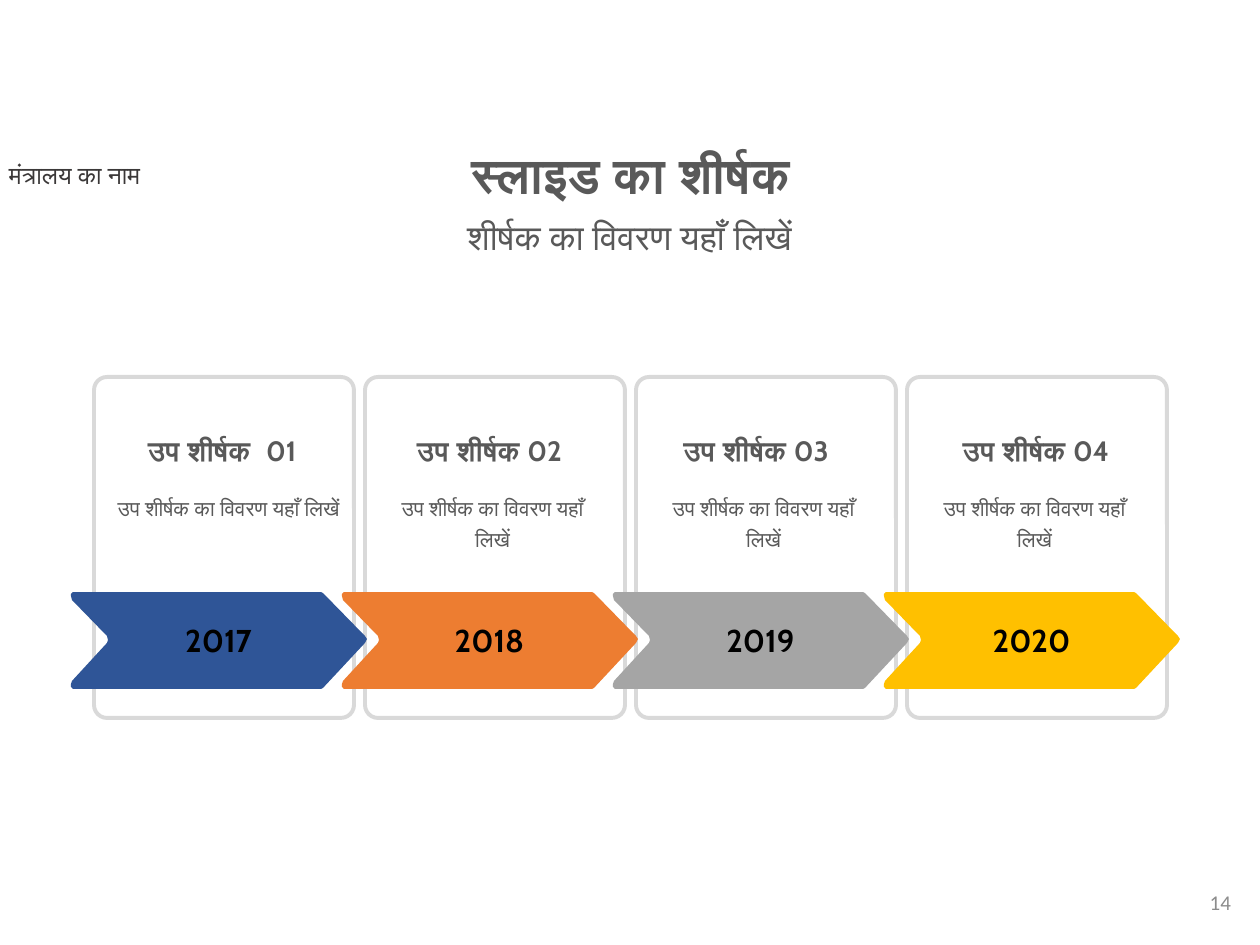
from pptx import Presentation
from pptx.dml.color import RGBColor
from pptx.enum.shapes import MSO_SHAPE as SHAPE
from pptx.enum.text import MSO_ANCHOR as ANCHOR, PP_ALIGN as ALIGN
from pptx.util import Pt

PX = 914400 // 126
PITCH = 271
GREY = "595959"
DETAIL = "उप शीर्षक का विवरण यहाँ लिखें"

# year, colour, heading runs, heading (left, width), detail (left, width)
CARDS = [
    ("2017", "2F5597", ("उप शीर्षक ", " 01"), (103, 238), (111, 235)),
    ("2018", "ED7D31", ("उप शीर्षक", " 02"), (375, 229), (381, 223)),
    ("2019", "A5A5A5", ("उप शीर्षक ", "03"), (639, 234), (652, 223)),
    ("2020", "FFC000", ("उप शीर्षक", " 04"), (917, 238), (923, 223)),
]
FRAME = (94, 377, 260, 341)
ARROW_AT = (69, 592)
ARROW = [
    (38, 44), (3, 8), (2, 4), (2, 2), (4, 0), (252, 0), (254, 1),
    (296, 44), (298, 47), (296, 51), (254, 96), (252, 97),
    (4, 97), (2, 95), (2, 92), (3, 89), (38, 51), (39, 48),
]
HEAD = dict(size=Pt(16), bold=True)
# text, box, alignment, anchor, font name, colour, font values, line spacing
LABELS = [
    ("मंत्रालय का नाम", (-4, 154, 275, 43), ALIGN.LEFT, ANCHOR.TOP,
     "Calibri", "3B3838", dict(size=Pt(14)), 1.0),
    ("14", (960, 877, 284, 50), ALIGN.RIGHT, ANCHOR.MIDDLE,
     "Calibri", "8C8C8C", dict(size=Pt(12)), 1.0),
    ("शीर्षक का विवरण यहाँ लिखें", (184, 214, 891, 79), ALIGN.CENTER, ANCHOR.TOP,
     "Calibri", GREY, dict(size=Pt(20)), 0.9),
    ("स्लाइड का शीर्षक", (234, 145, 793, 59), ALIGN.CENTER, ANCHOR.TOP,
     "Calibri", GREY, dict(size=Pt(28), bold=True), 0.9),
]


def rgb(value):
    return RGBColor.from_string(value)


def emu(box):
    return [v * PX for v in box]


def add_text(s, box, runs, color, font, align=ALIGN.CENTER, anchor=ANCHOR.TOP,
             spacing=1.0, insets=(13, 6)):
    """Add a one-paragraph text box; runs are (text, font name) pairs."""
    tf = s.shapes.add_textbox(*emu(box)).text_frame
    side, edge = emu(insets)
    frame = dict(word_wrap=True, vertical_anchor=anchor, margin_left=side,
                 margin_right=side, margin_top=edge, margin_bottom=edge)
    for key, value in frame.items():
        setattr(tf, key, value)
    p = tf.paragraphs[0]
    p.alignment = align
    p.line_spacing = spacing
    for text, name in runs:
        r = p.add_run()
        r.text = text
        for key, value in dict(font, name=name).items():
            setattr(r.font, key, value)
        r.font.color.rgb = rgb(color)


def add_frame(s, i):
    x, y, w, h = FRAME
    sp = s.shapes.add_shape(SHAPE.ROUNDED_RECTANGLE, *emu((x + i * PITCH, y, w, h)))
    sp.adjustments[0] = 0.05
    sp.shadow.inherit = False
    sp.fill.background()
    sp.line.color.rgb = rgb("D9D9D9")
    sp.line.width = Pt(2.25)


def add_arrow(s, i, color):
    left, top = ARROW_AT
    points = [(left + i * PITCH + x, top + y) for x, y in ARROW]
    builder = s.shapes.build_freeform(*points[0], scale=PX)
    builder.add_line_segments(points[1:], close=True)
    sp = builder.convert_to_shape()
    sp.shadow.inherit = False
    sp.fill.solid()
    sp.fill.fore_color.rgb = rgb(color)
    sp.line.fill.background()


def main():
    prs = Presentation()
    prs.slide_width, prs.slide_height = emu((1260, 945))
    s = prs.slides.add_slide(prs.slide_layouts[6])
    for i in range(len(CARDS)):
        add_frame(s, i)
    for i, (year, color, heading, (hx, hw), (dx, dw)) in enumerate(CARDS):
        add_arrow(s, i, color)
        add_text(s, (166 + i * PITCH, 615, 105, 50), [(year, "Cabin")], "000000",
                 dict(size=Pt(18), bold=True), anchor=ANCHOR.MIDDLE)
        add_text(s, (dx, 488, dw, 64), [(DETAIL, "Open Sans")], GREY,
                 dict(size=Pt(12)), spacing=1.2, insets=(5, 3))
        add_text(s, (hx, 426, hw, 47), zip(heading, ("Calibri", "Cabin")), GREY,
                 HEAD, anchor=ANCHOR.BOTTOM)
    for text, box, align, anchor, name, color, font, spacing in LABELS:
        add_text(s, box, [(text, name)], color, font, align, anchor, spacing)
    prs.save("out.pptx")


if __name__ == "__main__":
    main()
